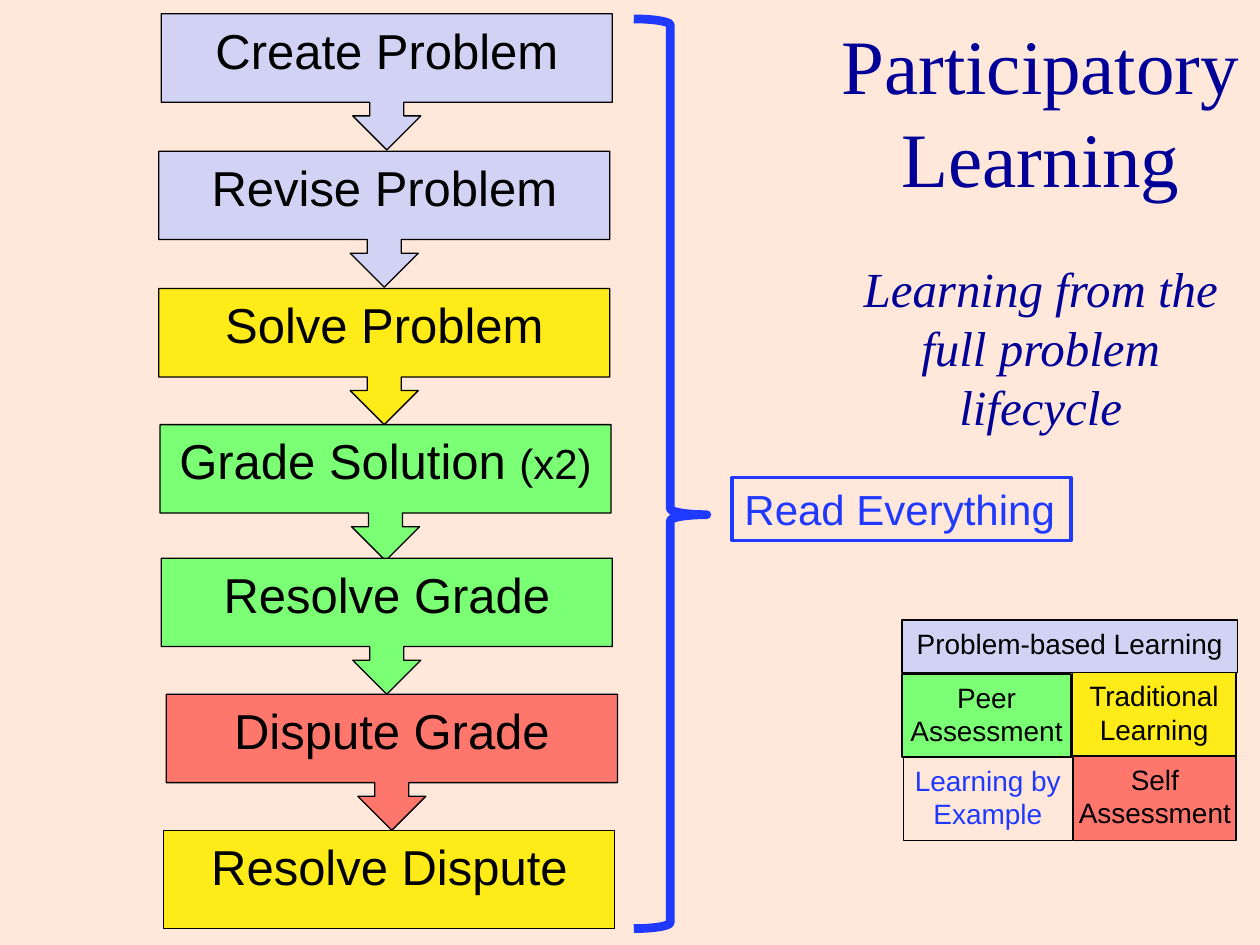
import pptx
import pptx.util
import pptx.dml.color
import pptx.enum.shapes
import pptx.enum.text

Inches = pptx.util.Inches
Pt = pptx.util.Pt
RGB = pptx.dml.color.RGBColor
SHAPE = pptx.enum.shapes.MSO_SHAPE
ALIGN = pptx.enum.text.PP_ALIGN
ANCHOR = pptx.enum.text.MSO_ANCHOR
FIT = pptx.enum.text.MSO_AUTO_SIZE

PEACH = RGB(0xFF, 0xE8, 0xD9)
LILAC = RGB(0xD2, 0xD2, 0xF4)
YELLOW = RGB(0xFF, 0xEB, 0x18)
GREEN = RGB(0x7B, 0xFF, 0x75)
RED = RGB(0xFF, 0x77, 0x6C)
BLUE = RGB(0x20, 0x39, 0xFF)
NAVY = RGB(0x00, 0x00, 0x99)
BLACK = RGB(0x00, 0x00, 0x00)

prs = pptx.Presentation()
prs.slide_width = Inches(10)
prs.slide_height = Inches(7.5)
slide = prs.slides.add_slide(prs.slide_layouts[5])
slide.background.fill.solid()
slide.background.fill.fore_color.rgb = PEACH


def write(para, text, size=28, color=BLACK, font="Arial", italic=False,
          align=ALIGN.CENTER):
    para.alignment = align
    run = para.add_run()
    run.text = text
    run.font.size = Pt(size)
    run.font.name = font
    run.font.italic = italic
    run.font.color.rgb = color


def draw(kind, left, top, width, height, fill=None, line=BLACK, weight=0.75):
    """Add a preset shape with plain fill and line, its text at the top."""
    shape = slide.shapes.add_shape(
        kind, Inches(left), Inches(top), Inches(width), Inches(height))
    shape.shadow.inherit = False
    if fill is None:
        shape.fill.background()
    else:
        shape.fill.solid()
        shape.fill.fore_color.rgb = fill
    shape.line.color.rgb = line
    shape.line.width = Pt(weight)
    shape.text_frame.vertical_anchor = ANCHOR.TOP
    return shape


# Title and subtitle
title = slide.shapes.title
title.left, title.top = Inches(6.52), Inches(0.09)
title.width, title.height = Inches(3.48), Inches(3)
frame = title.text_frame
frame.word_wrap = True
frame.auto_size = FIT.NONE
frame.vertical_anchor = ANCHOR.TOP
write(frame.paragraphs[0], "Participatory Learning", size=44, color=NAVY,
      font="Times New Roman")
sub = frame.add_paragraph()
sub.space_before = Pt(32)
write(sub, "Learning from the full problem lifecycle", color=NAVY,
      font="Times New Roman", italic=True)

# Problem lifecycle: each step points down to the next
steps = [
    ("Create Problem", 1.28, 0.11, LILAC),
    ("Revise Problem", 1.26, 1.2, LILAC),
    ("Solve Problem", 1.26, 2.29, YELLOW),
    ("Grade Solution ", 1.27, 3.37, GREEN),
    ("Resolve Grade", 1.28, 4.43, GREEN),
    ("Dispute Grade", 1.32, 5.51, RED),
    ("Resolve Dispute", 1.3, 6.59, YELLOW),
]
for text, left, top, fill in steps:
    last = text == steps[-1][0]
    kind = SHAPE.RECTANGLE if last else SHAPE.DOWN_ARROW_CALLOUT
    step = draw(kind, left, top, 3.58, 0.78 if last else 1.08, fill)
    para = step.text_frame.paragraphs[0]
    write(para, text)
    if text.startswith("Grade"):
        write(para, "(x2)", size=24)

# Brace over all steps
brace = draw(SHAPE.RIGHT_BRACE, 5.03, 0.15, 0.58, 7.22, line=BLUE, weight=5)
brace.adjustments[0] = 0.083
brace.adjustments[1] = 0.545
label = draw(SHAPE.RECTANGLE, 5.81, 3.79, 2.69, 0.5, line=BLUE, weight=2)
label.text_frame.word_wrap = False
label.text_frame.auto_size = FIT.SHAPE_TO_FIT_TEXT
write(label.text_frame.paragraphs[0], "Read Everything", size=24, color=BLUE,
      align=ALIGN.LEFT)

# Legend
legend = [
    ("Traditional Learning", 8.51, 5.34, 1.3, 0.66, YELLOW, BLACK),
    ("Problem-based Learning", 7.16, 4.92, 2.66, 0.42, LILAC, BLACK),
    ("Peer Assessment", 7.16, 5.35, 1.34, 0.66, GREEN, BLACK),
    ("Learning by Example", 7.17, 6.01, 1.34, 0.66, None, BLUE),
    ("Self Assessment", 8.52, 6, 1.29, 0.67, RED, BLACK),
]
for text, left, top, width, height, fill, color in legend:
    frame = draw(SHAPE.RECTANGLE, left, top, width, height, fill).text_frame
    frame.margin_left = frame.margin_right = frame.margin_bottom = 0
    write(frame.paragraphs[0], text, size=16, color=color)

prs.save("out.pptx")
